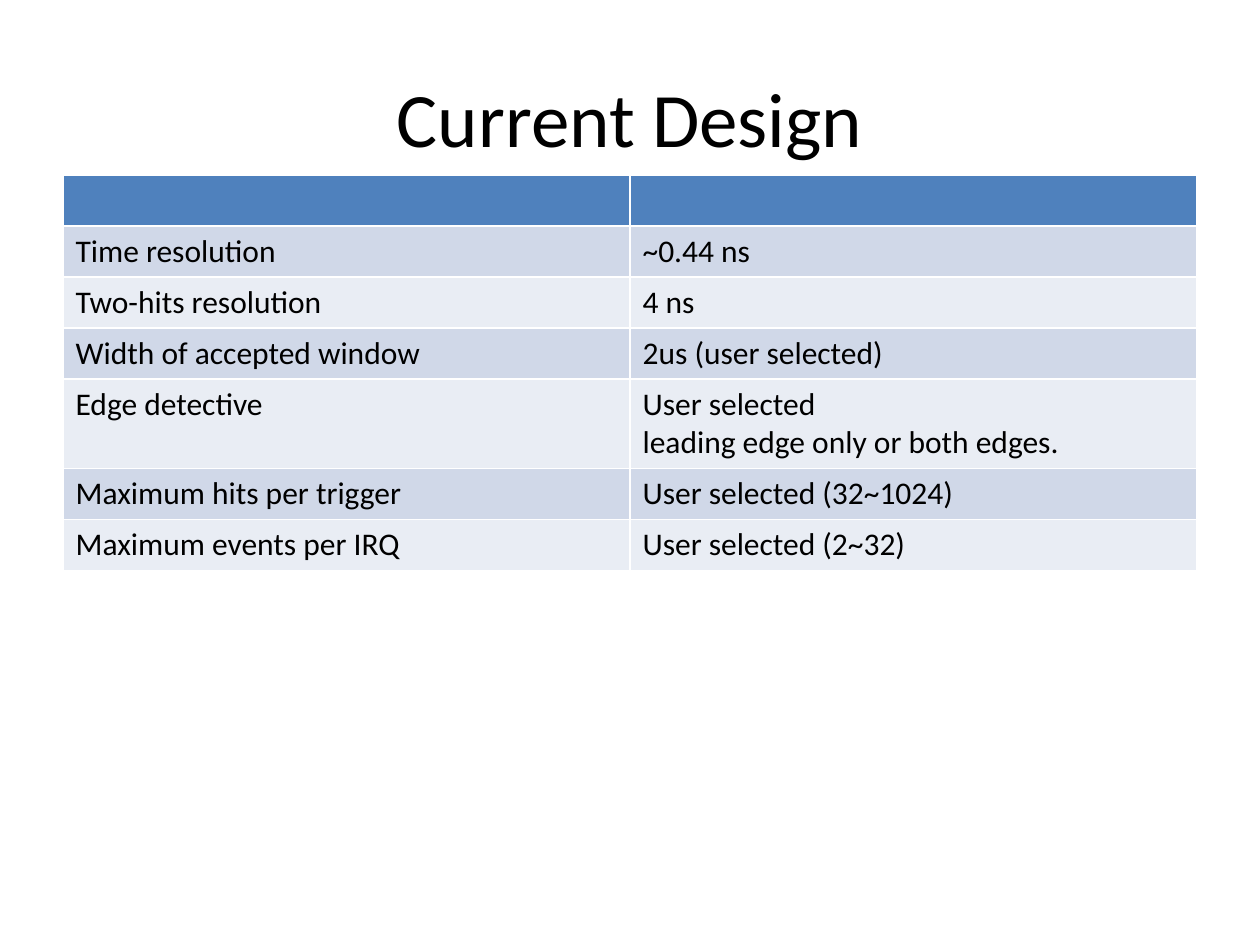
"""Build the Current Design slide with its table of settings."""
from dataclasses import dataclass

from pptx import Presentation
from pptx.dml.color import RGBColor
from pptx.enum.text import MSO_ANCHOR, PP_ALIGN
from pptx.slide import Slide
from pptx.text.text import TextFrame
from pptx.util import Inches, Pt

CENTER, LEFT = PP_ALIGN.CENTER, PP_ALIGN.LEFT
MIDDLE = MSO_ANCHOR.MIDDLE
BLANK_LAYOUT = 6
SLIDE_WIDTH, SLIDE_HEIGHT = 10, 7.5


@dataclass(frozen=True)
class Theme:
    """Colours, font and type sizes of the slide."""

    font: str = "Calibri"
    text: str = "000000"
    header: str = "4F81BD"
    bands: tuple[str, str] = ("D0D8E8", "E9EDF4")
    title_size: int = 44
    body_size: int = 18


@dataclass(frozen=True)
class Area:
    """A region given in percent of the slide's size."""

    left: float
    top: float
    width: float
    height: float

    def lengths(self) -> tuple[int, int, int, int]:
        """Return left, top, width and height as slide lengths."""
        return (across(self.left), down(self.top), across(self.width), down(self.height))


@dataclass(frozen=True)
class Setting:
    """One table row: a name and the lines of its value."""

    name: str = ""
    value: tuple[str, ...] = ("",)


THEME = Theme()
TITLE_AREA = Area(5, 4, 90, 16.7)
TABLE_LEFT, TABLE_TOP, TABLE_WIDTH = 5, 18.5, 90
ROW_HEIGHT, EXTRA_LINE_HEIGHT = 5.4, 4.1
SETTINGS = (
    Setting("Time resolution", ("~0.44 ns",)),
    Setting("Two-hits resolution", ("4 ns",)),
    Setting("Width of accepted window", ("2us (user selected)",)),
    Setting("Edge detective", ("User selected", "leading edge only or both edges.")),
    Setting("Maximum hits per trigger", ("User selected (32~1024)",)),
    Setting("Maximum events per IRQ", ("User selected (2~32)",)),
)


def across(percent: float) -> int:
    """Turn a percentage of the slide's width into a length."""
    return Inches(SLIDE_WIDTH * percent / 100)


def down(percent: float) -> int:
    """Turn a percentage of the slide's height into a length."""
    return Inches(SLIDE_HEIGHT * percent / 100)


def write_text(frame: TextFrame, *lines: str, size: int = THEME.body_size,
               color: str = THEME.text, alignment: PP_ALIGN = LEFT) -> None:
    """Write one formatted paragraph per line."""
    frame.text = "\n".join(lines)
    for paragraph in frame.paragraphs:
        paragraph.alignment = alignment
        paragraph.font.name = THEME.font
        paragraph.font.size = Pt(size)
        paragraph.font.color.rgb = RGBColor.from_string(color)


def add_title(slide: Slide, title: str) -> None:
    """Add the centred slide title."""
    frame = slide.shapes.add_textbox(*TITLE_AREA.lengths()).text_frame
    frame.word_wrap = True
    frame.vertical_anchor = MIDDLE
    write_text(frame, title, size=THEME.title_size, alignment=CENTER)


def add_settings_table(slide: Slide, settings: tuple[Setting, ...]) -> None:
    """Add an empty header row and a banded row for each setting."""
    rows = (Setting(), *settings)
    heights = [ROW_HEIGHT + EXTRA_LINE_HEIGHT * (len(row.value) - 1) for row in rows]
    area = Area(TABLE_LEFT, TABLE_TOP, TABLE_WIDTH, sum(heights))
    table = slide.shapes.add_table(len(rows), 2, *area.lengths()).table
    for index, (row, height) in enumerate(zip(rows, heights)):
        table.rows[index].height = down(height)
        fill = THEME.bands[(index - 1) % 2] if index else THEME.header
        for column, lines in enumerate(((row.name,), row.value)):
            cell = table.cell(index, column)
            cell.fill.solid()
            cell.fill.fore_color.rgb = RGBColor.from_string(fill)
            write_text(cell.text_frame, *lines)


def main() -> None:
    """Build and save the presentation."""
    presentation = Presentation()
    presentation.slide_width = Inches(SLIDE_WIDTH)
    presentation.slide_height = Inches(SLIDE_HEIGHT)
    slide = presentation.slides.add_slide(presentation.slide_layouts[BLANK_LAYOUT])
    add_title(slide, "Current Design")
    add_settings_table(slide, SETTINGS)
    presentation.save("out.pptx")


if __name__ == "__main__":
    main()
